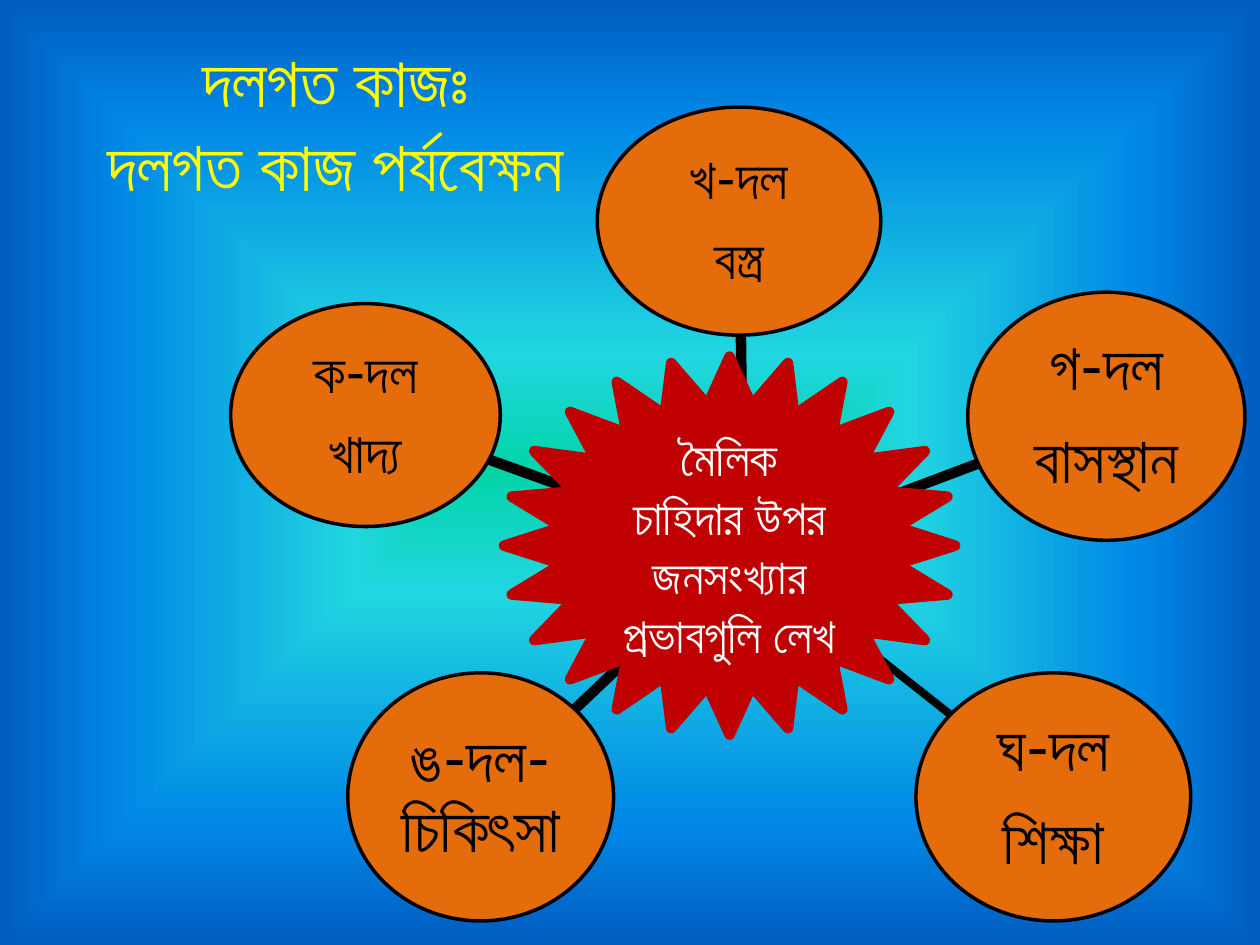
from pptx import Presentation
from pptx.dml.color import RGBColor
from pptx.enum.shapes import MSO_CONNECTOR as CONN, MSO_SHAPE as SHAPE
from pptx.enum.text import MSO_ANCHOR as ANCHOR, PP_ALIGN as ALIGN
from pptx.oxml import parse_xml
from pptx.oxml.ns import nsdecls, qn
from pptx.util import Pt
from lxml.etree import SubElement

BLACK, ORANGE, RED = "000000", "E46C0A", "C00000"
STOPS = [(0, "03D4A8"), (25, "21D6E0"), (75, "0087E6"), (100, "005CBF")]
GROUPS = [
    (["খ-দল", "বস্ত্র"], 32, (341.3, 61.2, 162, 130.3), (424, 244, 423.4, 191.5), 6),
    (["গ-দল", "বাসস্থান"], 37, (553, 167, 158.4, 141.8), (491.8, 290.2, 558.7, 265), 6),
    (["ঘ-দল", "শিক্ষা"], 37, (523.4, 384.5, 157, 141.8), (481, 359.3, 542.9, 408.2), 4.5),
    (["ঙ-দল-চিকিৎসা"], 37, (198.7, 384.5, 151.9, 141.8), (373, 362.9, 328.3, 405.4), 6),
    (["ক-দল", "খাদ্য"], 32, (131.8, 173.5, 154.1, 127.4), (357.8, 290.9, 280, 262.8), 6),
]


def rgb(code):
    """Return the colour for a hex string."""
    return RGBColor.from_string(code)


def set_background(s):
    """Fill the slide with a gradient that spreads from its centre."""
    s.background.fill.solid()
    stops = "".join(f'<a:gs pos="{pos * 1000}"><a:srgbClr val="{code}"/></a:gs>'
                    for pos, code in STOPS)
    grad = parse_xml(
        f'<a:gradFill {nsdecls("a")} rotWithShape="1"><a:gsLst>{stops}</a:gsLst>'
        '<a:path path="shape"><a:fillToRect l="50000" t="50000" r="50000" b="50000"/>'
        '</a:path></a:gradFill>')
    solid = next(s.background._cSld.iter(qn("a:solidFill")))
    solid.getparent().replace(solid, grad)


def write(tf, lines, size, color, line_spacing=None, after_pct=None):
    """Write centred paragraphs into a text frame."""
    for i, line in enumerate(lines):
        p = tf.add_paragraph() if i else tf.paragraphs[0]
        p.text = line
        p.alignment = ALIGN.CENTER
        if line_spacing:
            p.line_spacing = line_spacing
        if after_pct:
            after = SubElement(p._p.get_or_add_pPr(), qn("a:spcAft"))
            SubElement(after, qn("a:spcPct")).set("val", str(after_pct * 1000))
        p.font.name = "Lato"
        p.font.size = Pt(size)
        p.font.color.rgb = rgb(color)


def add_title(s, lines, box):
    """Place the title in the given box."""
    title = s.shapes.title
    title.left, title.top, title.width, title.height = map(Pt, box)
    tf = title.text_frame
    tf.word_wrap = False
    tf.vertical_anchor = ANCHOR.TOP
    write(tf, lines, 40, "FFFF00")


def add_figure(s, kind, box, fill, line, width):
    """Add a filled and outlined shape that centres its text."""
    sp = s.shapes.add_shape(kind, *map(Pt, box))
    sp.shadow.inherit = False
    sp.fill.solid()
    sp.fill.fore_color.rgb = rgb(fill)
    sp.line.color.rgb = rgb(line)
    sp.line.width = Pt(width)
    sp.text_frame.word_wrap = True
    sp.text_frame.vertical_anchor = ANCHOR.MIDDLE
    return sp


def add_spoke(s, ends, width):
    """Draw the line from the hub to a group."""
    spoke = s.shapes.add_connector(CONN.STRAIGHT, *map(Pt, ends))
    spoke.line.color.rgb = rgb(BLACK)
    spoke.line.width = Pt(width)
    SubElement(spoke._element.spPr, qn("a:effectLst"))


def add_group(s, lines, size, box):
    """Draw the circle of one group with its topic."""
    tf = add_figure(s, SHAPE.OVAL, box, ORANGE, BLACK, 2).text_frame
    tf.margin_left = tf.margin_right = tf.margin_top = tf.margin_bottom = Pt(2)
    write(tf, lines, size, BLACK, line_spacing=0.9, after_pct=35)


def add_hub(s, text, box):
    """Draw the star with the task in the middle."""
    sp = add_figure(s, SHAPE.STAR_24_POINT, box, RED, RED, 6)
    write(sp.text_frame, [text], 28, "FFFFFF")


def main():
    """Build the slide and save it."""
    prs = Presentation()
    prs.slide_width, prs.slide_height = Pt(720), Pt(540)
    s = prs.slides.add_slide(prs.slide_layouts[5])
    set_background(s)
    add_title(s, ["দলগত কাজঃ", "দলগত কাজ পর্যবেক্ষন"], (48, 18, 287.3, 104.4))
    for lines, size, box, ends, width in GROUPS:
        add_spoke(s, ends, width)
        add_group(s, lines, size, box)
    add_hub(s, "মৈলিক চাহিদার উপর জনসংখ্যার প্রভাবগুলি লেখ", (288, 203.8, 257.8, 216))
    prs.save("out.pptx")


if __name__ == "__main__":
    main()
